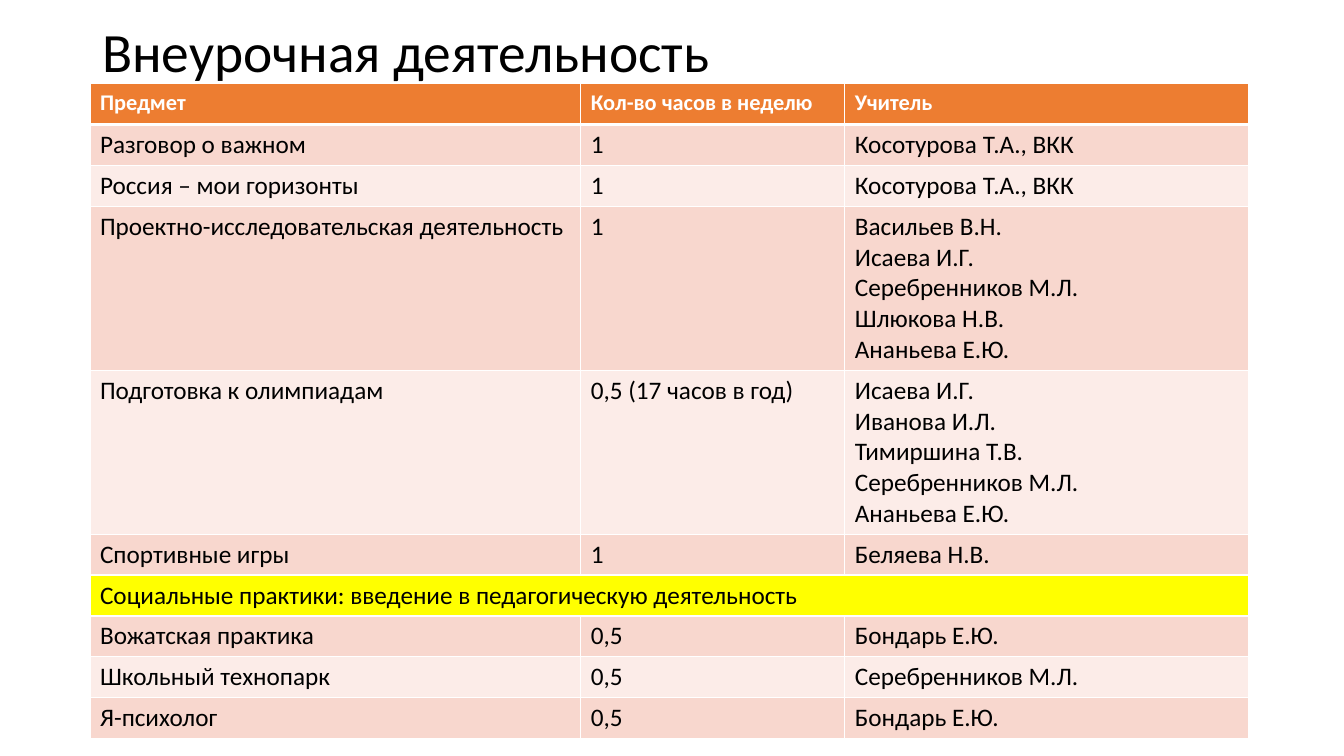
import lxml.etree
import pptx
import pptx.dml.color
import pptx.enum.text
import pptx.oxml.ns
import pptx.util

Pt = pptx.util.Pt
RGBColor = pptx.dml.color.RGBColor

FONT = "Calibri"
BLACK = RGBColor(0x00, 0x00, 0x00)
WHITE = RGBColor(0xFF, 0xFF, 0xFF)
ORANGE = RGBColor(0xED, 0x7D, 0x31)
DARK_BAND = RGBColor(0xF8, 0xD7, 0xCE)
LIGHT_BAND = RGBColor(0xFC, 0xEC, 0xE8)
YELLOW = RGBColor(0xFF, 0xFF, 0x00)

SECTION = "Социальные практики: введение в педагогическую деятельность"
ROWS = [
    ("Предмет", "Кол-во часов в неделю", ["Учитель"]),
    ("Разговор о важном", "1", ["Косотурова Т.А., ВКК"]),
    ("Россия – мои горизонты", "1", ["Косотурова Т.А., ВКК"]),
    ("Проектно-исследовательская деятельность", "1",
     ["Васильев В.Н.", "Исаева И.Г.", "Серебренников М.Л.", "Шлюкова Н.В.", "Ананьева Е.Ю."]),
    ("Подготовка к олимпиадам", "0,5 (17 часов в год)",
     ["Исаева И.Г.", "Иванова И.Л.", "Тимиршина Т.В.", "Серебренников М.Л.", "Ананьева Е.Ю."]),
    ("Спортивные игры", "1", ["Беляева Н.В."]),
    (SECTION,),
    ("Вожатская практика", "0,5", ["Бондарь Е.Ю."]),
    ("Школьный технопарк", "0,5", ["Серебренников М.Л."]),
    ("Я-психолог", "0,5", ["Бондарь Е.Ю."]),
]
COLUMN_WIDTHS = [350.6, 188.6, 288.7]
ROW_HEIGHT = 29.2
LINE_HEIGHT = 21.95


def add_text(para, text, size, color, bold=False):
    span = para.add_run()
    span.text = text
    span.font.name = FONT
    span.font.size = Pt(size)
    span.font.bold = bold
    span.font.color.rgb = color


def set_borders(cell, top, bottom):
    """Draw white cell borders; top and bottom are widths in points."""
    properties = cell._tc.get_or_add_tcPr()
    sides = [("lnL", 1), ("lnR", 1), ("lnT", top), ("lnB", bottom)]
    for position, (side, width) in enumerate(sides):
        line = lxml.etree.Element(pptx.oxml.ns.qn(f"a:{side}"), w=str(Pt(width)))
        fill = lxml.etree.SubElement(line, pptx.oxml.ns.qn("a:solidFill"))
        lxml.etree.SubElement(fill, pptx.oxml.ns.qn("a:srgbClr"), val=str(WHITE))
        properties.insert(position, line)


deck = pptx.Presentation()
deck.slide_width = Pt(960)
deck.slide_height = Pt(540)
page = deck.slides.add_slide(deck.slide_layouts[5])

title = page.shapes.title
title.left, title.top, title.width, title.height = Pt(65.8), Pt(20), Pt(828), Pt(37.4)
title.text_frame.auto_size = pptx.enum.text.MSO_AUTO_SIZE.NONE
title.text_frame.vertical_anchor = pptx.enum.text.MSO_ANCHOR.MIDDLE
heading = title.text_frame.paragraphs[0]
heading.alignment = pptx.enum.text.PP_ALIGN.LEFT
heading.line_spacing = 0.9
add_text(heading, "Внеурочная деятельность", 39.6, BLACK)

frame = page.shapes.add_table(
    len(ROWS), len(COLUMN_WIDTHS), Pt(64.3), Pt(59.8),
    Pt(sum(COLUMN_WIDTHS)), Pt(ROW_HEIGHT * len(ROWS)))
table = frame.table
for column, width in zip(table.columns, COLUMN_WIDTHS):
    column.width = Pt(width)

for row_index, row in enumerate(ROWS):
    is_header = row_index == 0
    is_section = len(row) == 1
    if is_header:
        fill_color = ORANGE
    elif is_section:
        fill_color = YELLOW
    else:
        fill_color = DARK_BAND if row_index % 2 else LIGHT_BAND
    teachers = [] if is_section else row[2]
    extra_lines = max(len(teachers) - 1, 0)
    table.rows[row_index].height = Pt(ROW_HEIGHT + extra_lines * LINE_HEIGHT)

    for column_index in range(len(COLUMN_WIDTHS)):
        cell = table.cell(row_index, column_index)
        cell.fill.solid()
        cell.fill.fore_color.rgb = fill_color
        set_borders(cell, 3 if row_index == 1 else 1, 3 if is_header else 1)
    if is_section:
        table.cell(row_index, 0).merge(table.cell(row_index, len(COLUMN_WIDTHS) - 1))

    for column_index, content in enumerate(row):
        text_frame = table.cell(row_index, column_index).text_frame
        lines = content if isinstance(content, list) else [content]
        for line_index, text in enumerate(lines):
            para = text_frame.add_paragraph() if line_index else text_frame.paragraphs[0]
            if is_header:
                add_text(para, text, 16, WHITE, bold=True)
            else:
                add_text(para, text, 18, BLACK)

deck.save("out.pptx")
